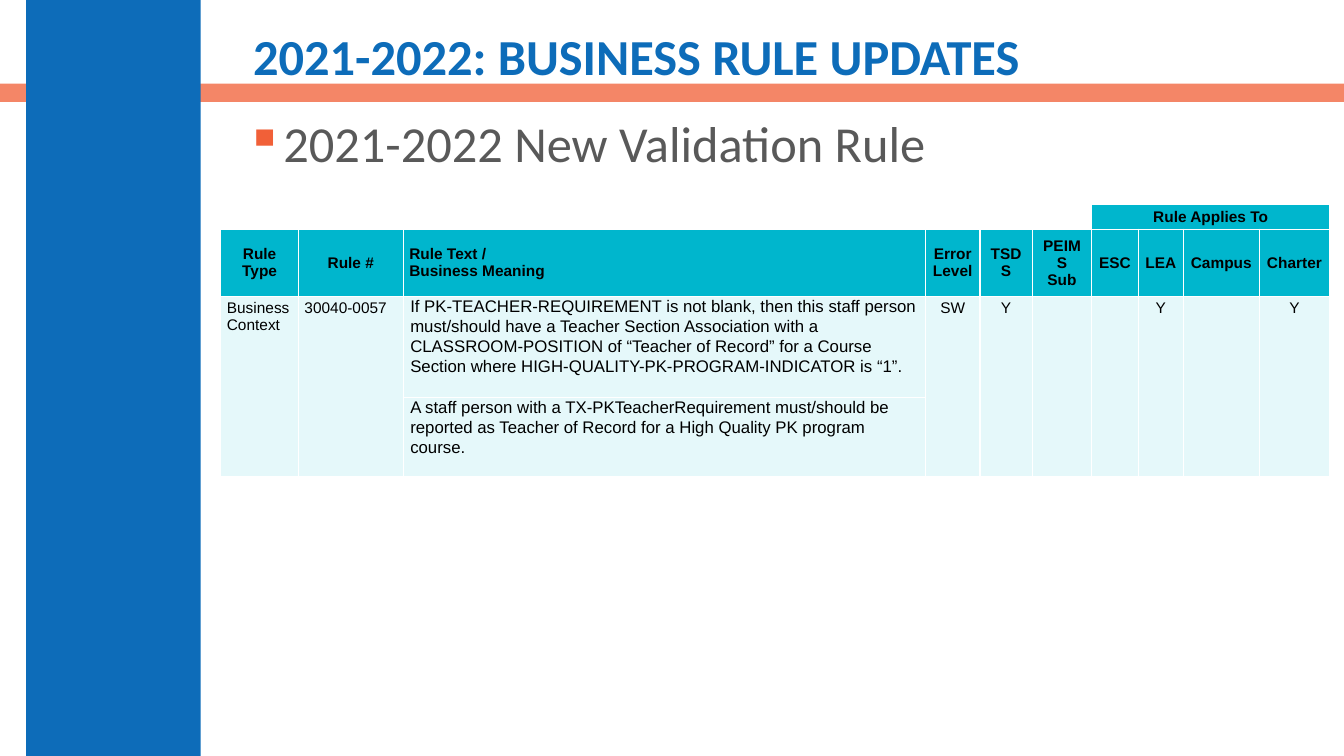
from lxml import etree
from pptx import Presentation
from pptx.dml.color import RGBColor
from pptx.enum.shapes import MSO_SHAPE as SHAPE
from pptx.enum.text import MSO_ANCHOR as ANCHOR, PP_ALIGN as ALIGN
from pptx.oxml.ns import qn
from pptx.util import Inches, Pt

BLUE, ORANGE, GREY = "0D6CB9", "F16038", "595959"
TEAL, PALE, WHITE, BLACK = "00B6CD", "E5F8FA", "FFFFFF", "000000"

COLUMN_WIDTHS = [0.77, 1.04, 5.18, 0.54, 0.52, 0.59, 0.46, 0.45, 0.75, 0.7]
ROW_HEIGHTS = [0.24, 0.67, 1.0, 0.79]
RULE_TEXT_COLUMN, APPLIES_COLUMN = 2, 6
HEADINGS = ["Rule\vType", "Rule #", "Rule Text /\vBusiness Meaning", "Error\vLevel", "TSDS",
            "PEIMS\vSub", "ESC", "LEA", "Campus", "Charter"]
RULE_TEXT = ("If PK-TEACHER-REQUIREMENT is not blank, then this staff person must/should have "
             "a Teacher Section Association with a CLASSROOM-POSITION of “Teacher of Record” "
             "for a Course Section where HIGH-QUALITY-PK-PROGRAM-INDICATOR is “1”.")
MEANING = ("A staff person with a TX-PKTeacherRequirement must/should be reported as "
           "Teacher of Record for a High Quality PK program course.")
RULE = ["Business\nContext", "30040-0057", RULE_TEXT, "SW", "Y", "", "", "Y", "", "Y"]


def rgb(value):
    return RGBColor.from_string(value)


def set_font(paragraph, name, size, color, bold=False):
    font = paragraph.font
    font.name, font.size, font.bold = name, Pt(size), bold
    font.color.rgb = rgb(color)


def add_bar(slide, left, top, width, height, color, opacity=100):
    bar = slide.shapes.add_shape(SHAPE.RECTANGLE, Inches(left), Inches(top),
                                 Inches(width), Inches(height))
    bar.shadow.inherit = False
    bar.fill.solid()
    bar.fill.fore_color.rgb = rgb(color)
    bar.line.fill.background()
    if opacity < 100:
        fill_color = bar.fill._xPr.find(qn("a:solidFill"))[0]
        etree.SubElement(fill_color, qn("a:alpha"), val=str(opacity * 1000))


def add_title(slide, left, top, width, height):
    title = slide.shapes.title
    title.left, title.top = Inches(left), Inches(top)
    title.width, title.height = Inches(width), Inches(height)
    title.text_frame.text = "2021-2022: BUSINESS RULE UPDATES"
    title.text_frame.vertical_anchor = ANCHOR.MIDDLE
    heading = title.text_frame.paragraphs[0]
    heading.alignment = ALIGN.LEFT
    heading.line_spacing = 0.9
    set_font(heading, "Calibri", 36, BLUE, bold=True)


def add_bullet_line(slide, left, top, width, height):
    box = slide.shapes.add_textbox(Inches(left), Inches(top), Inches(width), Inches(height))
    box.text_frame.word_wrap = True
    line = box.text_frame.paragraphs[0]
    line.text = "2021-2022 New Validation Rule"
    line.line_spacing = 0.9
    properties = line._p.get_or_add_pPr()
    properties.set("marL", str(Inches(0.25)))
    properties.set("indent", str(-Inches(0.25)))
    bullet_color = etree.SubElement(properties, qn("a:buClr"))
    etree.SubElement(bullet_color, qn("a:srgbClr"), val=ORANGE)
    etree.SubElement(properties, qn("a:buChar"), char="▪")
    set_font(line, "Calibri", 36, GREY)


def add_borders(cell):
    """Draw thin white lines round a cell; they must precede its fill in the XML."""
    properties = cell._tc.get_or_add_tcPr()
    for side in ("lnL", "lnR", "lnT", "lnB"):
        border = etree.SubElement(properties, qn(f"a:{side}"), w=str(Pt(1)))
        fill = etree.SubElement(border, qn("a:solidFill"))
        etree.SubElement(fill, qn("a:srgbClr"), val=WHITE)


def fill_cell(cell, text, color, size=11, bold=False, align=ALIGN.CENTER,
              anchor=ANCHOR.TOP, margins=(0.06, 0.03), spacing=None):
    add_borders(cell)
    cell.fill.solid()
    cell.fill.fore_color.rgb = rgb(color)
    cell.margin_left = cell.margin_right = Inches(margins[0])
    cell.margin_top = cell.margin_bottom = Inches(margins[1])
    cell.vertical_anchor = anchor
    cell.text_frame.text = text
    for paragraph in cell.text_frame.paragraphs:
        paragraph.alignment = align
        if spacing:
            paragraph.line_spacing = spacing
        set_font(paragraph, "Arial", size, BLACK, bold)
        if not text:
            etree.SubElement(paragraph._p, qn("a:endParaRPr"), sz=str(size * 100))


def add_rule_table(slide, left, top):
    frame = slide.shapes.add_table(len(ROW_HEIGHTS), len(COLUMN_WIDTHS), Inches(left), Inches(top),
                                   Inches(sum(COLUMN_WIDTHS)), Inches(sum(ROW_HEIGHTS)))
    table = frame.table
    for column, width in zip(table.columns, COLUMN_WIDTHS):
        column.width = Inches(width)
    for row, height in zip(table.rows, ROW_HEIGHTS):
        row.height = Inches(height)

    heading_style = dict(bold=True, anchor=ANCHOR.MIDDLE)
    prose_style = dict(size=12, align=ALIGN.LEFT, margins=(0.07, 0), spacing=1.05)
    for column, (heading, value) in enumerate(zip(HEADINGS, RULE)):
        applies = column >= APPLIES_COLUMN
        group = "Rule Applies To" if column == APPLIES_COLUMN else ""
        fill_cell(table.cell(0, column), group, TEAL if applies else WHITE, **heading_style)

        is_prose = column == RULE_TEXT_COLUMN
        fill_cell(table.cell(1, column), heading, TEAL,
                  align=ALIGN.LEFT if is_prose else ALIGN.CENTER, **heading_style)
        if is_prose:
            fill_cell(table.cell(2, column), value, PALE, **prose_style)
            fill_cell(table.cell(3, column), MEANING, PALE, **prose_style)
        else:
            align = ALIGN.LEFT if column < RULE_TEXT_COLUMN else ALIGN.CENTER
            fill_cell(table.cell(2, column), value, PALE, align=align)
            fill_cell(table.cell(3, column), "", PALE)
            table.cell(2, column).merge(table.cell(3, column))

    table.cell(0, 0).merge(table.cell(0, APPLIES_COLUMN - 1))
    table.cell(0, APPLIES_COLUMN).merge(table.cell(0, len(HEADINGS) - 1))


def main():
    deck = Presentation()
    deck.slide_width, deck.slide_height = Inches(13.33), Inches(7.5)
    slide = deck.slides.add_slide(deck.slide_layouts[5])
    add_bar(slide, 0, 0.83, 13.33, 0.18, ORANGE, opacity=76)
    add_bar(slide, 0.26, 0, 1.73, 7.5, BLUE)
    add_title(slide, 2.41, 0.18, 10.53, 0.82)
    add_bullet_line(slide, 2.34, 1.13, 9.83, 0.7)
    add_rule_table(slide, 2.19, 2.03)
    deck.save("out.pptx")


if __name__ == "__main__":
    main()
